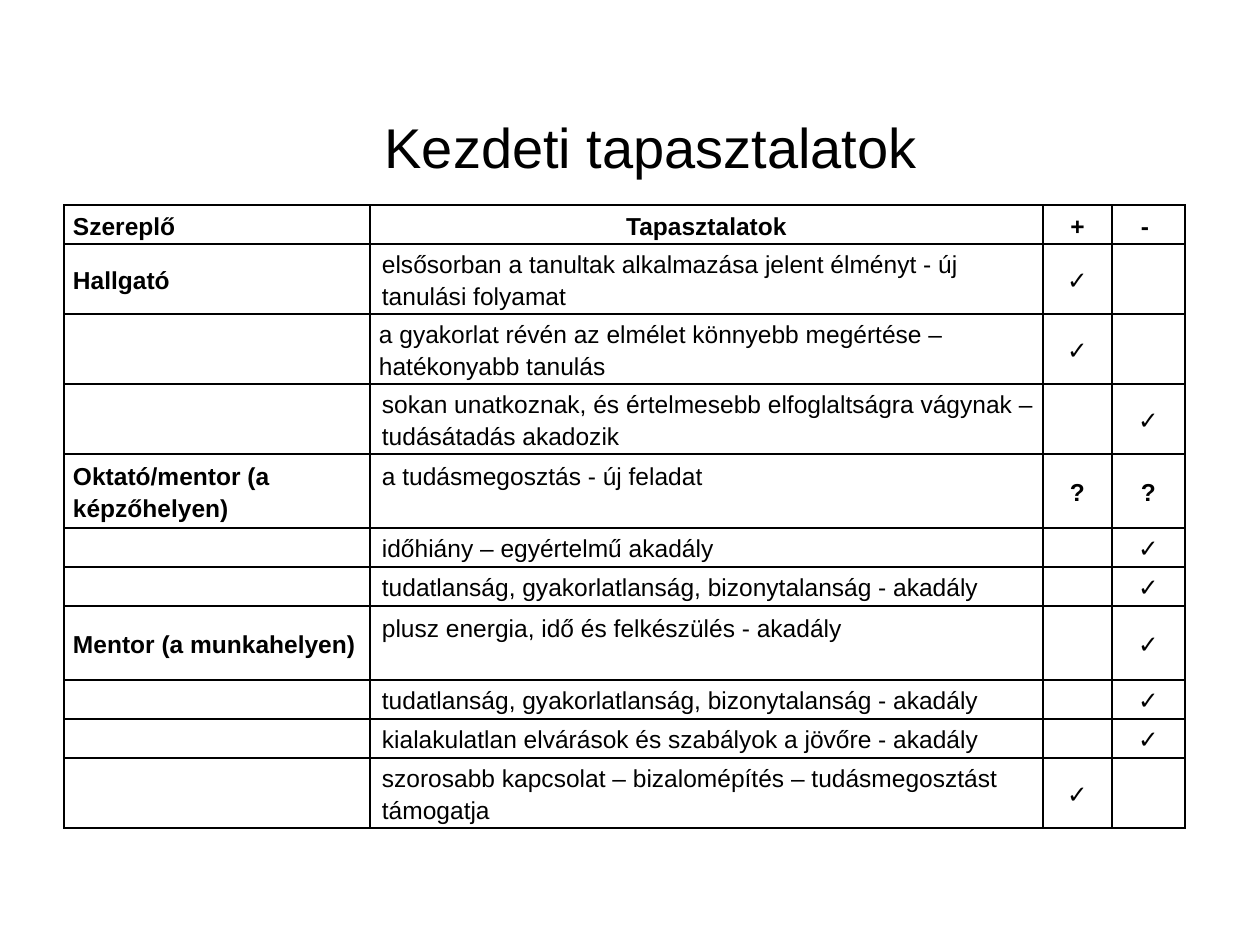
from lxml import etree
from pptx import Presentation
from pptx import util as u
from pptx.dml.color import RGBColor
from pptx.enum import text
from pptx.oxml.ns import qn

PX = 914400 // 126
COLORS = {"ink": "000000", "paper": "FFFFFF"}
INK = RGBColor.from_string(COLORS["ink"])
CHECK = "✓"

ROWS = [  # height, role, experience, plus, minus
    (39, "Szereplő", "Tapasztalatok", "+", "- "),
    (70, "Hallgató", "elsősorban a tanultak alkalmazása jelent élményt - új tanulási folyamat", CHECK, ""),
    (70, "", "a gyakorlat révén az elmélet könnyebb megértése – hatékonyabb tanulás", CHECK, ""),
    (70, "", "sokan unatkoznak, és értelmesebb elfoglaltságra vágynak – tudásátadás akadozik", "", CHECK),
    (74, "Oktató/mentor (a képzőhelyen)", "a tudásmegosztás - új feladat", "?", "?"),
    (39, "", "időhiány – egyértelmű akadály", "", CHECK),
    (39, "", "tudatlanság, gyakorlatlanság, bizonytalanság - akadály", "", CHECK),
    (74, "Mentor (a munkahelyen)", "plusz energia, idő és felkészülés - akadály", "", CHECK),
    (39, "", "tudatlanság, gyakorlatlanság, bizonytalanság - akadály", "", CHECK),
    (39, "", "kialakulatlan elvárások és szabályok a jövőre - akadály", "", CHECK),
    (70, "", "szorosabb kapcsolat – bizalomépítés – tudásmegosztást támogatja", CHECK, ""),
]
WIDTHS = [306, 673, 69, 73]
TALL = 74
UNINDENTED_ROWS = (0, 2)


def set_font(paragraph, size, bold=False):
    paragraph.font.name = "Arial"
    paragraph.font.size = u.Pt(size)
    paragraph.font.bold = bold
    paragraph.font.color.rgb = INK


def add_borders(cell):
    properties = cell._tc.get_or_add_tcPr()
    for side in ("lnL", "lnR", "lnT", "lnB"):
        line = etree.SubElement(properties, qn(f"a:{side}"), w=str(u.Pt(1)))
        fill = etree.SubElement(line, qn("a:solidFill"))
        etree.SubElement(fill, qn("a:srgbClr"), val=COLORS["ink"])


deck = Presentation()
deck.slide_width = 1260 * PX
deck.slide_height = 945 * PX
page = deck.slides.add_slide(deck.slide_layouts[5])
page.background.fill.solid()
page.background.fill.fore_color.rgb = RGBColor.from_string(COLORS["paper"])

title = page.shapes.title
title.left, title.top, title.width, title.height = 372 * PX, 106 * PX, 562 * PX, 81 * PX
title.text_frame.text = "Kezdeti tapasztalatok"
title.text_frame.word_wrap = False
title.text_frame.auto_size = text.MSO_AUTO_SIZE.NONE
title.text_frame.vertical_anchor = text.MSO_ANCHOR.MIDDLE
heading = title.text_frame.paragraphs[0]
heading.alignment = text.PP_ALIGN.LEFT
set_font(heading, 32)

frame = page.shapes.add_table(
    len(ROWS), len(WIDTHS), 64 * PX, 205 * PX,
    sum(WIDTHS) * PX, sum(row[0] for row in ROWS) * PX)
table = frame.table
table.first_row = table.horz_banding = False
for column, width in zip(table.columns, WIDTHS):
    column.width = width * PX

for r, (height, *values) in enumerate(ROWS):
    table.rows[r].height = height * PX
    for c, value in enumerate(values):
        cell = table.cell(r, c)
        add_borders(cell)
        cell.fill.background()
        cell.margin_left = cell.margin_right = 9 * PX
        cell.margin_top = cell.margin_bottom = 0
        cell.vertical_anchor = text.MSO_ANCHOR.MIDDLE
        if c == 1 and height == TALL:
            cell.vertical_anchor = text.MSO_ANCHOR.TOP
            cell.margin_top = 5 * PX
        cell.text = value
        paragraph = cell.text_frame.paragraphs[0]
        paragraph.line_spacing = 1.15
        if c > 1 or (r == 0 and c == 1):
            paragraph.alignment = text.PP_ALIGN.CENTER
        if c == 1 and r not in UNINDENTED_ROWS:
            paragraph._p.get_or_add_pPr().set("marL", str(3 * PX))
        set_font(paragraph, 14, bold=r == 0 or c == 0 or value == "?")

deck.save("out.pptx")
